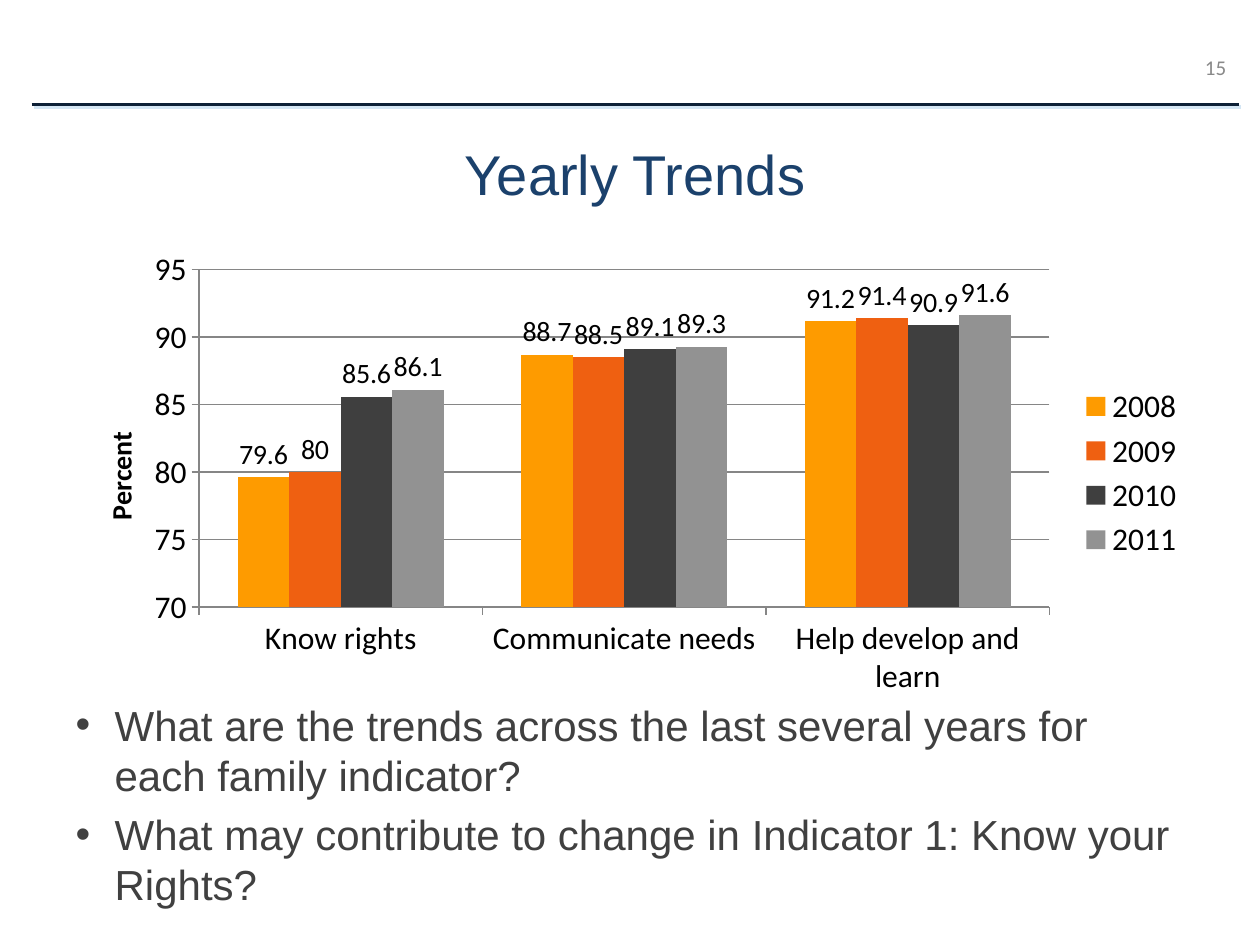
from dataclasses import dataclass

from lxml import etree
from pptx import Presentation
from pptx.chart.data import CategoryChartData
from pptx.dml.color import RGBColor
from pptx.enum.chart import XL_CHART_TYPE, XL_LABEL_POSITION, XL_LEGEND_POSITION, XL_TICK_MARK
from pptx.enum.shapes import MSO_CONNECTOR
from pptx.enum.text import MSO_ANCHOR, MSO_AUTO_SIZE, PP_ALIGN
from pptx.oxml import parse_xml
from pptx.oxml.ns import nsdecls, qn
from pptx.util import Inches, Pt

COLUMNS = XL_CHART_TYPE.COLUMN_CLUSTERED
LABEL_ABOVE = XL_LABEL_POSITION.OUTSIDE_END
LEGEND_RIGHT = XL_LEGEND_POSITION.RIGHT
TICK_OUTSIDE = XL_TICK_MARK.OUTSIDE
STRAIGHT = MSO_CONNECTOR.STRAIGHT
MIDDLE, TOP = MSO_ANCHOR.MIDDLE, MSO_ANCHOR.TOP
NO_FIT = MSO_AUTO_SIZE.NONE
LEFT, CENTER, RIGHT = PP_ALIGN.LEFT, PP_ALIGN.CENTER, PP_ALIGN.RIGHT

COLORS = {
    "rule": "0D2036",
    "rule_shadow": "D4E6F4",
    "title": "1B416C",
    "body": "404040",
    "number": "898989",
    "chart_text": "000000",
    "grid": "868686",
}


@dataclass
class YearSeries:
    year: str
    values: tuple[float, ...]
    color: str


@dataclass
class TextStyle:
    font: str
    size: int
    color: str
    alignment: PP_ALIGN
    anchor: MSO_ANCHOR


CATEGORIES = ("Know rights", "Communicate needs", "Help develop and learn")
YEARS = (
    YearSeries("2008", (79.6, 88.7, 91.2), "FE9B00"),
    YearSeries("2009", (80, 88.5, 91.4), "EF6011"),
    YearSeries("2010", (85.6, 89.1, 90.9), "3F3F3F"),
    YearSeries("2011", (86.1, 89.3, 91.6), "929292"),
)
QUESTIONS = (
    "What are the trends across the last several years for each family indicator?",
    "What may contribute to change in Indicator 1: Know your Rights?",
)
TITLE_STYLE = TextStyle("Arial", 32, "title", CENTER, MIDDLE)
BODY_STYLE = TextStyle("Arial", 24, "body", LEFT, TOP)
NUMBER_STYLE = TextStyle("Calibri", 12, "number", RIGHT, MIDDLE)


def rgb(name: str) -> RGBColor:
    return RGBColor.from_string(COLORS[name])


def set_font(font, **values) -> None:
    for attribute, value in values.items():
        setattr(font, attribute, value)


def place(shape, left: float, top: float, width: float, height: float) -> None:
    box = {"left": left, "top": top, "width": width, "height": height}
    for attribute, value in box.items():
        setattr(shape, attribute, Inches(value))


def add_bullet(paragraph) -> None:
    properties = paragraph._p.get_or_add_pPr()
    properties.set("marL", str(Inches(0.31)))
    properties.set("indent", str(Inches(-0.31)))
    etree.SubElement(properties, qn("a:buFont")).set("typeface", "Arial")
    etree.SubElement(properties, qn("a:buChar")).set("char", "•")


def write_text(shape, lines: tuple[str, ...], style: TextStyle, bullets: bool = False) -> None:
    frame = shape.text_frame
    frame.word_wrap = True
    frame.auto_size = NO_FIT
    frame.vertical_anchor = style.anchor
    frame.text = "\n".join(lines)
    for index, paragraph in enumerate(frame.paragraphs):
        if bullets:
            add_bullet(paragraph)
        paragraph.alignment = style.alignment
        paragraph.space_before = Pt(0.2 * style.size if index else 0)
        for run in paragraph.runs:
            set_font(run.font, name=style.font, size=Pt(style.size))
            run.font.color.rgb = rgb(style.color)


def add_header_rule(slide) -> None:
    rule = slide.shapes.add_connector(
        STRAIGHT, Inches(0.25), Inches(0.83), Inches(9.83), Inches(0.83))
    rule.line.color.rgb = rgb("rule")
    rule.line.width = Pt(2)
    rule._element.spPr.append(parse_xml(
        f'<a:effectLst {nsdecls("a")}>'
        f'<a:outerShdw blurRad="0" dist="{Pt(2)}" dir="{40 * 60000}" rotWithShape="0">'
        f'<a:srgbClr val="{COLORS["rule_shadow"]}"/></a:outerShdw></a:effectLst>'))


def set_layout(parent, position: int, target: str = "", **fractions: float) -> None:
    """Fix a chart part's place, in fractions of the chart's size."""
    for previous in parent.findall(qn("c:layout")):
        parent.remove(previous)
    layout = etree.Element(qn("c:layout"))
    manual = etree.SubElement(layout, qn("c:manualLayout"))
    settings = {"layoutTarget": target} if target else {}
    settings.update(xMode="edge", yMode="edge", **fractions)
    for name, value in settings.items():
        etree.SubElement(manual, qn(f"c:{name}")).set("val", str(value))
    parent.insert(position, layout)


def format_axes(chart) -> None:
    value_axis = chart.value_axis
    scale = {"minimum_scale": 70, "maximum_scale": 95, "major_unit": 5}
    for attribute, value in scale.items():
        setattr(value_axis, attribute, value)
    value_axis.major_gridlines.format.line.color.rgb = rgb("grid")
    for axis in (chart.category_axis, value_axis):
        axis.major_tick_mark = TICK_OUTSIDE
        axis.format.line.color.rgb = rgb("grid")
    title = value_axis.axis_title
    title.text_frame.text = "Percent"
    font = title.text_frame.paragraphs[0].runs[0].font
    set_font(font, name="Calibri", size=Pt(16), bold=True)
    font.color.rgb = rgb("chart_text")
    title.text_frame._txBody.bodyPr.set("rot", "-5400000")
    title.text_frame._txBody.bodyPr.set("vert", "horz")
    set_layout(title._element, 1, x=0.03, y=0.4)


def add_trend_chart(slide) -> None:
    data = CategoryChartData()
    data.categories = CATEGORIES
    for series in YEARS:
        data.add_series(series.year, series.values)
    chart = slide.shapes.add_chart(
        COLUMNS, Inches(0.5), Inches(1.92), Inches(9), Inches(3.67), data).chart
    chart.has_title = False
    set_font(chart.font, name="Calibri", size=Pt(18))
    chart.font.color.rgb = rgb("chart_text")
    chart.has_legend = True
    chart.legend.position = LEGEND_RIGHT
    chart.legend.include_in_layout = False
    format_axes(chart)

    plot = chart.plots[0]
    plot.gap_width = 150
    plot.overlap = 0
    plot.vary_by_categories = False
    for bars, series in zip(plot.series, YEARS):
        bars.format.fill.solid()
        bars.format.fill.fore_color.rgb = RGBColor.from_string(series.color)
        labels = bars.data_labels
        labels.show_value = True
        labels.position = LABEL_ABOVE
        set_font(labels.font, name="Calibri", size=Pt(16))
        labels.font.color.rgb = rgb("chart_text")
    plot_area = chart.element.find(f".//{qn('c:plotArea')}")
    set_layout(plot_area, 0, "inner", x=0.12, y=0.06, w=0.75, h=0.73)


def main() -> None:
    presentation = Presentation()
    presentation.slide_width = Inches(10)
    presentation.slide_height = Inches(7.5)
    slide = presentation.slides.add_slide(presentation.slide_layouts[1])
    add_header_rule(slide)

    title, body = slide.placeholders
    place(title, 0.25, 1, 9.58, 0.75)
    write_text(title, ("Yearly Trends",), TITLE_STYLE)
    add_trend_chart(slide)
    place(body, 0.5, 5.5, 8.92, 1.75)
    write_text(body, QUESTIONS, BODY_STYLE, bullets=True)

    number = slide.shapes.add_textbox(Inches(8.08), Inches(0.33), Inches(1.75), Inches(0.4))
    write_text(number, ("15",), NUMBER_STYLE)
    presentation.save("out.pptx")


if __name__ == "__main__":
    main()
